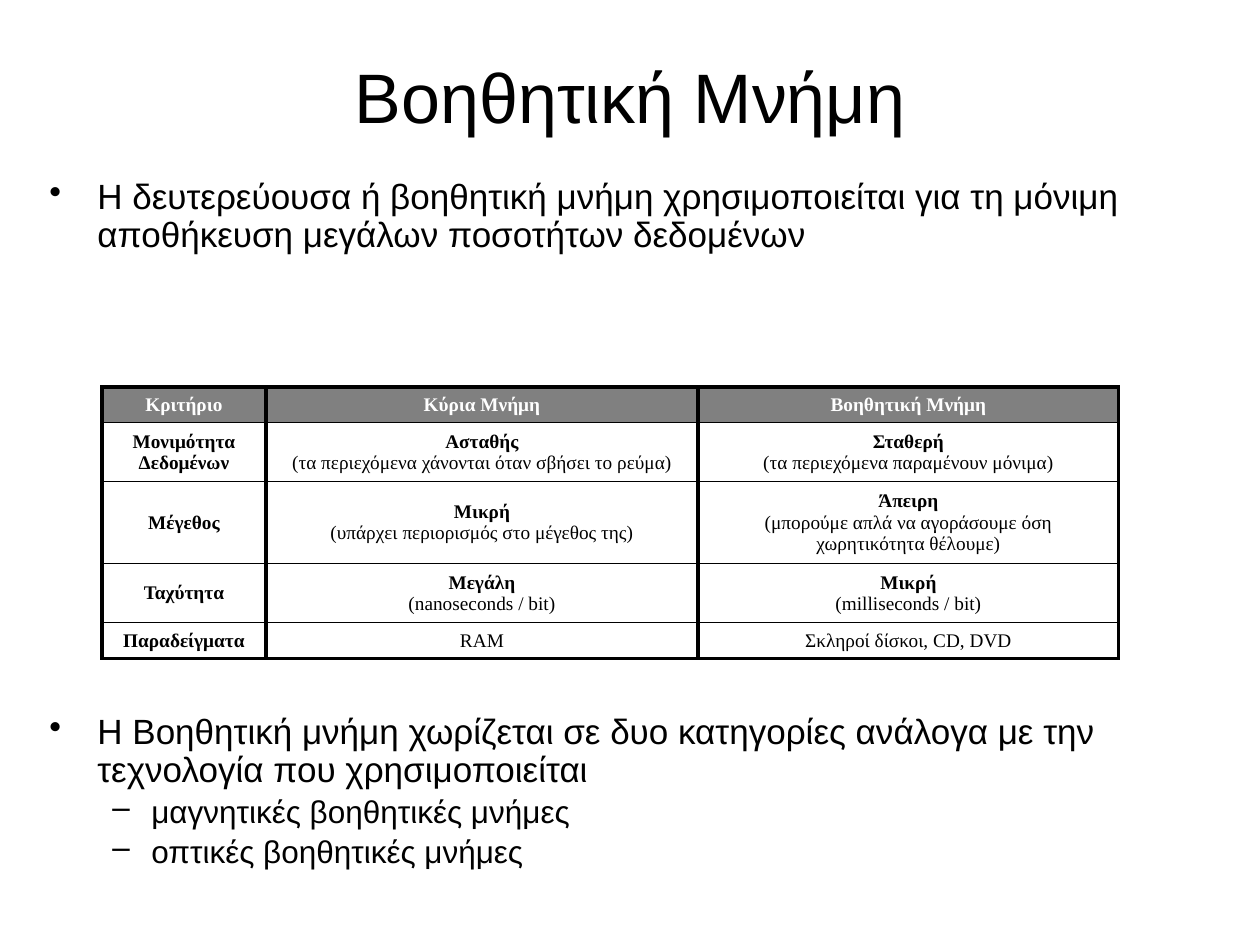
"""Build the slide comparing main and secondary memory."""
from typing import NamedTuple

from lxml.etree import SubElement
from pptx import Presentation
from pptx.dml.color import RGBColor
from pptx.enum.text import MSO_ANCHOR, PP_ALIGN
from pptx.oxml.ns import qn
from pptx.util import Emu, Pt

EMU_PER_PX = 914400 / 126
BLACK = RGBColor(0x00, 0x00, 0x00)
WHITE = RGBColor(0xFF, 0xFF, 0xFF)
GRAY = RGBColor(0x80, 0x80, 0x80)


class Area(NamedTuple):
    left: int
    top: int
    width: int
    height: int


class Level(NamedTuple):
    bullet: str
    margin: int
    indent: int
    size: int


class Item(NamedTuple):
    text: str
    level: Level


class Entry(NamedTuple):
    strong: str = ""
    detail: str = ""


MAIN = Level("•", 48, -48, 20)
SUB = Level("–", 102, -39, 18)
DEFINITION = [
    Item("Η δευτερεύουσα ή βοηθητική μνήμη χρησιμοποιείται για τη μόνιμη "
         "αποθήκευση μεγάλων ποσοτήτων δεδομένων", MAIN),
]
CATEGORIES = [
    Item("Η Βοηθητική μνήμη χωρίζεται σε δυο κατηγορίες ανάλογα με την "
         "τεχνολογία που χρησιμοποιείται", MAIN),
    Item("μαγνητικές βοηθητικές μνήμες", SUB),
    Item("οπτικές βοηθητικές μνήμες", SUB),
]
COLUMN_WIDTHS = [164, 432, 421]
ROW_HEIGHTS = [35, 59, 82, 59, 35]
COMPARISON = [
    [Entry("Κριτήριο"), Entry("Κύρια Μνήμη"), Entry("Βοηθητική Μνήμη")],
    [Entry("Μονιμότητα Δεδομένων"),
     Entry("Ασταθής", "(τα περιεχόμενα χάνονται όταν σβήσει το ρεύμα)"),
     Entry("Σταθερή", "(τα περιεχόμενα παραμένουν μόνιμα)")],
    [Entry("Μέγεθος"),
     Entry("Μικρή", "(υπάρχει περιορισμός στο μέγεθος της)"),
     Entry("Άπειρη", "(μπορούμε απλά να αγοράσουμε όση χωρητικότητα θέλουμε)")],
    [Entry("Ταχύτητα"),
     Entry("Μεγάλη", "(nanoseconds / bit)"),
     Entry("Μικρή", "(milliseconds / bit)")],
    [Entry("Παραδείγματα"), Entry(detail="RAM"),
     Entry(detail="Σκληροί δίσκοι, CD, DVD")],
]


def px(length: int) -> Emu:
    return Emu(round(length * EMU_PER_PX))


def style(paragraph, name: str, size: int, color: RGBColor, bold: bool = False) -> None:
    font = paragraph.font
    font.name, font.size, font.bold = name, Pt(size), bold
    font.color.rgb = color


def add_box(page, area: Area):
    box = page.shapes.add_textbox(*map(px, area))
    box.text_frame.word_wrap = True
    return box.text_frame


def add_title(page, area: Area, text: str) -> None:
    frame = add_box(page, area)
    frame.vertical_anchor = MSO_ANCHOR.MIDDLE
    paragraph = frame.paragraphs[0]
    paragraph.text = text
    paragraph.alignment = PP_ALIGN.CENTER
    style(paragraph, "Arial", 40, BLACK)


def add_list(page, area: Area, items: list[Item]) -> None:
    frame = add_box(page, area)
    for index, (text, level) in enumerate(items):
        paragraph = frame.add_paragraph() if index else frame.paragraphs[0]
        paragraph.text = text
        paragraph.line_spacing = 0.9
        if index:
            paragraph.space_before = Pt(level.size * 0.2)
        properties = paragraph._p.get_or_add_pPr()
        properties.set("marL", str(px(level.margin)))
        properties.set("indent", str(px(level.indent)))
        SubElement(properties, qn("a:buChar"), char=level.bullet)
        style(paragraph, "Arial", level.size, BLACK)


def set_borders(cell, widths: dict[str, float]) -> None:
    properties = cell._tc.get_or_add_tcPr()
    for index, (side, width) in enumerate(widths.items()):
        line = properties.makeelement(qn(f"a:ln{side}"), {"w": str(Pt(width))})
        fill = SubElement(line, qn("a:solidFill"))
        SubElement(fill, qn("a:srgbClr"), val=str(BLACK))
        properties.insert(index, line)


def fill_cell(cell, entry: Entry, header: bool) -> None:
    cell.vertical_anchor = MSO_ANCHOR.MIDDLE
    cell.fill.solid()
    cell.fill.fore_color.rgb = GRAY if header else WHITE
    lines = [(text, text == entry.strong) for text in entry if text]
    frame = cell.text_frame
    for index, (text, bold) in enumerate(lines):
        paragraph = frame.add_paragraph() if index else frame.paragraphs[0]
        paragraph.text = text
        paragraph.alignment = PP_ALIGN.CENTER
        style(paragraph, "Times New Roman", 11, WHITE if header else BLACK, bold)


def add_comparison(page, left: int, top: int) -> None:
    rows, columns = len(ROW_HEIGHTS), len(COLUMN_WIDTHS)
    area = Area(left, top, sum(COLUMN_WIDTHS), sum(ROW_HEIGHTS))
    table = page.shapes.add_table(rows, columns, *map(px, area)).table
    for column, width in zip(table.columns, COLUMN_WIDTHS):
        column.width = px(width)
    for y, (row, height) in enumerate(zip(table.rows, ROW_HEIGHTS)):
        row.height = px(height)
        for x, cell in enumerate(row.cells):
            fill_cell(cell, COMPARISON[y][x], header=y == 0)
            set_borders(cell, {
                "L": 2 if x == 0 else 2.25,
                "R": 2 if x == columns - 1 else 2.25,
                "T": 2 if y == 0 else 1,
                "B": 2 if y == rows - 1 else 1,
            })


def main() -> None:
    deck = Presentation()
    deck.slide_width, deck.slide_height = px(1260), px(945)
    page = deck.slides.add_slide(deck.slide_layouts[6])
    add_title(page, Area(63, 38, 1134, 115), "Βοηθητική Μνήμη")
    add_list(page, Area(37, 173, 1134, 90), DEFINITION)
    add_comparison(page, 102, 387)
    add_list(page, Area(37, 708, 1134, 170), CATEGORIES)
    deck.save("out.pptx")


if __name__ == "__main__":
    main()
